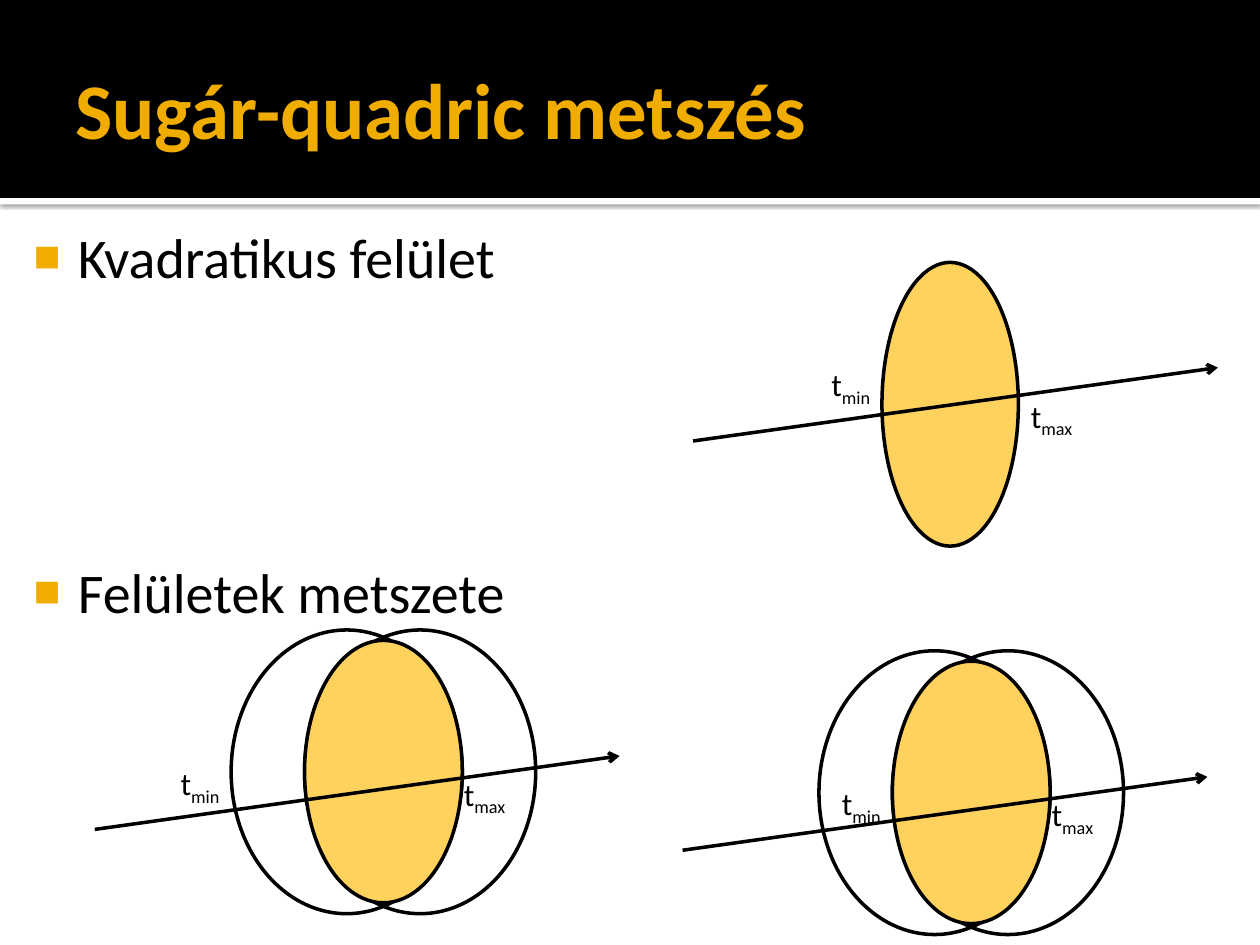
"""Builds the slide on ray and quadric intersection."""
from dataclasses import dataclass

from lxml import etree
from pptx import Presentation
from pptx.dml.color import RGBColor
from pptx.enum.shapes import MSO_CONNECTOR, MSO_SHAPE
from pptx.enum.text import MSO_ANCHOR, MSO_AUTO_SIZE, PP_ALIGN
from pptx.oxml.ns import qn
from pptx.util import Cm, Pt

STRAIGHT = MSO_CONNECTOR.STRAIGHT
RECT, OVAL = MSO_SHAPE.RECTANGLE, MSO_SHAPE.OVAL
LEFT, MIDDLE, TOP = PP_ALIGN.LEFT, MSO_ANCHOR.MIDDLE, MSO_ANCHOR.TOP
NO_FIT, GROW = MSO_AUTO_SIZE.NONE, MSO_AUTO_SIZE.SHAPE_TO_FIT_TEXT


@dataclass(frozen=True)
class Theme:
    """Colours, font and sizes of the slide."""
    font: str = "Calibri"
    ink: str = "000000"
    paper: str = "FFFFFF"
    accent: str = "F0AD00"
    solid: str = "FFD25D"
    title: int = 45
    body: int = 32
    label: int = 18
    line: int = 2


def add_xml(parent, tag, **attrs):
    """Append a DrawingML child element and return it."""
    return etree.SubElement(parent, qn(tag), {k: str(v) for k, v in attrs.items()})


class SlideBuilder:
    """Holds the theme and the slide and adds elements to it."""

    def __init__(self, slide, theme):
        self.slide, self.theme = slide, theme

    def style(self, p, size, color, bold=False):
        p.alignment = LEFT
        p.font.name, p.font.size, p.font.bold = self.theme.font, Pt(size), bold
        p.font.color.rgb = RGBColor.from_string(color)

    def place(self, sp, box, insets, anchor):
        sp.left, sp.top, sp.width, sp.height = map(Cm, box)
        tf = sp.text_frame
        tf.word_wrap, tf.auto_size, tf.vertical_anchor = True, NO_FIT, anchor
        tf.margin_left, tf.margin_top, tf.margin_right, tf.margin_bottom = map(Cm, insets)
        return tf

    def title(self, text, box):
        tf = self.place(self.slide.shapes.title, box, (0.25, 0.13, 0.13, 0.13), MIDDLE)
        tf.text = text
        self.style(tf.paragraphs[0], self.theme.title, self.theme.accent, True)

    def bullets(self, items, box, gap):
        tf = self.place(self.slide.placeholders[1], box, (0.15, 0.25, 0.25, 0.13), TOP)
        tf.text = "\n".join(items)
        for i, p in enumerate(tf.paragraphs):
            p.space_before = Pt(gap if i else 0)
            pPr = p._p.get_or_add_pPr()
            pPr.set("marL", str(Cm(1.22)))
            pPr.set("indent", str(Cm(-0.89)))
            add_xml(add_xml(pPr, "a:buClr"), "a:srgbClr", val=self.theme.accent)
            add_xml(pPr, "a:buSzPct", val=80000)
            add_xml(pPr, "a:buChar", char="■")
            self.style(p, self.theme.body, self.theme.ink)

    def shape(self, kind, box, fill=None, outlined=True):
        sp = self.slide.shapes.add_shape(kind, *map(Cm, box))
        sp.shadow.inherit = False
        if fill:
            sp.fill.solid()
            sp.fill.fore_color.rgb = RGBColor.from_string(fill)
        else:
            sp.fill.background()
        if outlined:
            self.outline(sp)
        else:
            sp.line.fill.background()
        return sp

    def outline(self, sp):
        sp.line.color.rgb = RGBColor.from_string(self.theme.ink)
        sp.line.width = Pt(self.theme.line)

    def band(self, box, fill, shadow=False):
        sp = self.shape(RECT, box, fill, outlined=False)
        if shadow:
            effects = sp.element.spPr.find(qn("a:effectLst"))
            outer = add_xml(effects, "a:outerShdw", blurRad=Pt(2.5), dist=Pt(0.8),
                            dir=5400000, algn="t", rotWithShape=0)
            color = add_xml(outer, "a:srgbClr", val=self.theme.ink)
            add_xml(color, "a:alpha", val=60000)
        sp.element.getparent().insert(2, sp.element)

    def ray(self, x, y):
        ends = (x, y, x + 10.58, y - 1.48)
        line = self.slide.shapes.add_connector(STRAIGHT, *map(Cm, ends))
        self.outline(line)
        spPr = line.element.spPr
        add_xml(spPr.find(qn("a:ln")), "a:tailEnd", type="arrow")
        add_xml(spPr, "a:effectLst")

    def label(self, sub, x, y, width):
        box = self.slide.shapes.add_textbox(*map(Cm, (x, y, width, 1.02)))
        tf = box.text_frame
        tf.word_wrap, tf.auto_size = True, GROW
        p = tf.paragraphs[0]
        p.add_run().text = "t"
        r = p.add_run()
        r.text = sub
        r.font._element.set("baseline", "-25000")
        self.style(p, self.theme.label, self.theme.ink)

    def hits(self, near, far):
        self.label("min", *near, 1.48)
        self.label("max", *far, 1.9)

    def intersection(self, x, y, near):
        for dx in (0, 1.48):
            self.shape(OVAL, (x + dx, y, 4.66, 5.72))
        self.shape(OVAL, (x + 1.48, y + 0.21, 3.18, 5.29), self.theme.solid)
        self.ray(x - 2.75, y + 4.02)
        self.hits(near, (x + 4.44, y + 2.79))


def main():
    prs = Presentation()
    prs.slide_width, prs.slide_height = Cm(25.4), Cm(19.05)
    theme = Theme()
    s = SlideBuilder(prs.slides.add_slide(prs.slide_layouts[1]), theme)

    s.band((0, 0, 25.4, 3.99), theme.ink)
    s.band((0, 3.99, 25.4, 0.13), theme.paper, shadow=True)
    s.title("Sugár-quadric metszés", (1.27, 0.43, 22.86, 3.48))
    s.bullets(["Kvadratikus felület", "Felületek metszete"],
              (0.2, 4.24, 22.86, 12.85), gap=153)

    s.shape(OVAL, (17.78, 5.29, 2.75, 5.72), theme.solid)
    s.ray(13.97, 8.89)
    s.hits((16.51, 7.24), (20.53, 7.87))

    s.intersection(4.66, 12.7, near=(3.39, 15.27))
    s.intersection(16.51, 13.12, near=(16.72, 15.68))
    prs.save("out.pptx")


if __name__ == "__main__":
    main()
